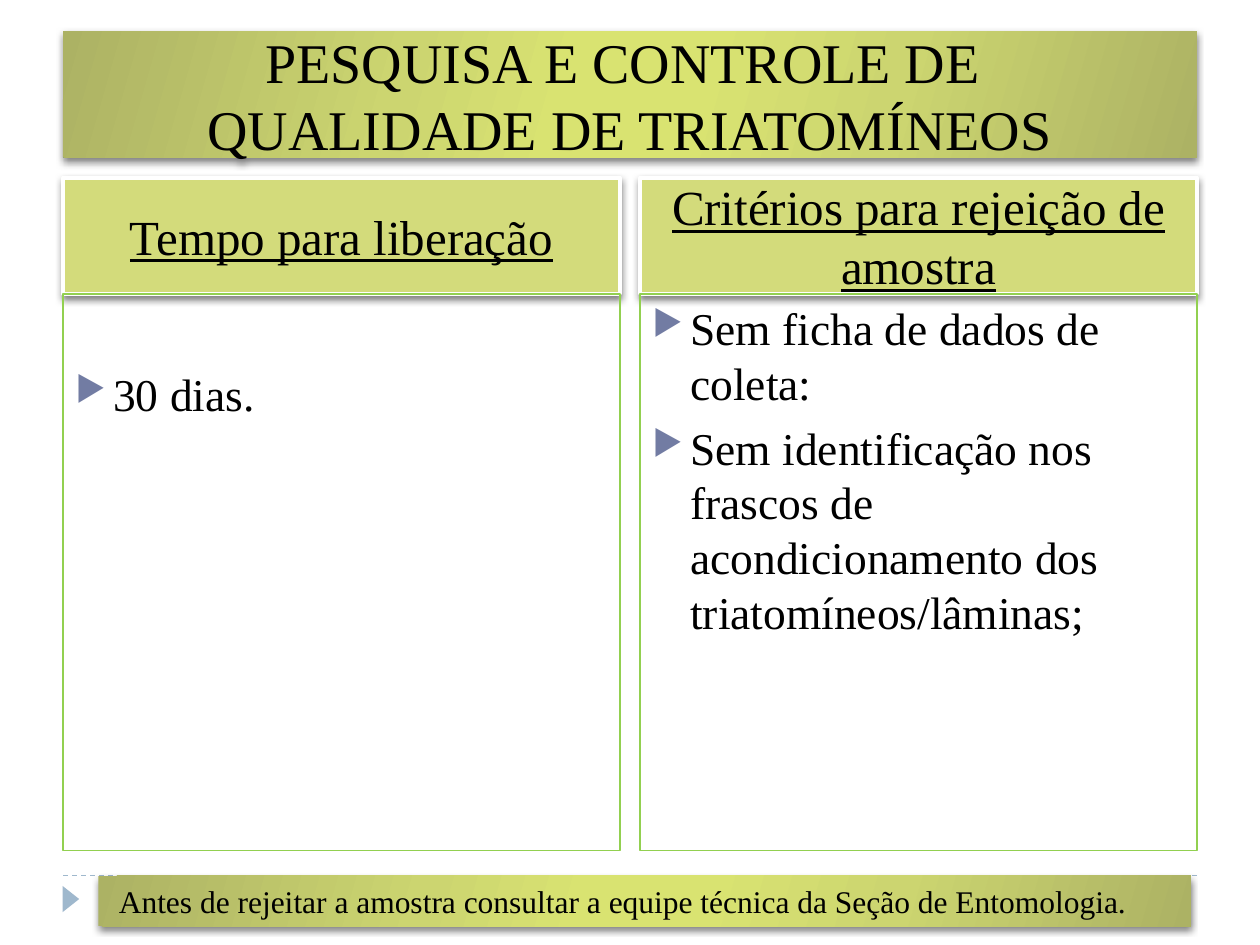
from dataclasses import dataclass

from lxml import etree
from pptx import Presentation
from pptx import util as u
from pptx.dml.color import RGBColor
from pptx.enum import dml, shapes, text
from pptx.oxml import ns

Pt = u.Pt


@dataclass(frozen=True)
class Theme:
    font: str = "Times New Roman"
    ink: str = "000000"
    white: str = "FFFFFF"
    header: str = "D3DB7B"
    frame: str = "92D050"
    rule: str = "9FB8CD"
    bullet: str = "727CA3"
    gradient: tuple = ((0, "ACB264"), (30, "CCD570"), (45, "D9E371"),
                       (55, "D9E371"), (73, "CCD570"), (100, "ACB264"))
    gradient_angle: int = 16
    title_size: int = 32
    header_size: int = 28
    body_size: int = 26
    note_size: int = 18


def add_xml(parent, tag, **attributes):
    return etree.SubElement(parent, ns.qn(tag), attributes)


class SlideBuilder:
    def __init__(self, slide, theme):
        self.slide = slide
        self.theme = theme

    def rule(self, left, right, y):
        line = self.slide.shapes.add_connector(
            shapes.MSO_CONNECTOR.STRAIGHT, Pt(left), Pt(y), Pt(right), Pt(y))
        line.line.color.rgb = RGBColor.from_string(self.theme.rule)
        line.line.width = Pt(0.75)
        line.line.dash_style = dml.MSO_LINE.DASH
        add_xml(line._element.spPr, "a:effectLst")

    def shape(self, kind, box, fill=None, line=None, width=0.75):
        item = self.slide.shapes.add_shape(kind, *map(Pt, box))
        item.shadow.inherit = False
        if fill:
            item.fill.solid()
            item.fill.fore_color.rgb = RGBColor.from_string(fill)
        else:
            item.fill.background()
        if line:
            item.line.color.rgb = RGBColor.from_string(line)
            item.line.width = Pt(width)
        else:
            item.line.fill.background()
        return item

    def marker(self, box):
        self.shape(shapes.MSO_SHAPE.ISOSCELES_TRIANGLE, box,
                   fill=self.theme.rule).rotation = 90

    def drop_shadow(self, item):
        effects = item._element.spPr.find(ns.qn("a:effectLst"))
        shadow = add_xml(effects, "a:outerShdw", blurRad=str(Pt(4)),
                         dist=str(Pt(2)), dir="5400000", rotWithShape="0")
        color = add_xml(shadow, "a:srgbClr", val=self.theme.ink)
        add_xml(color, "a:alpha", val="50000")

    def gradient(self, item):
        properties = item._element.spPr
        fill = etree.Element(ns.qn("a:gradFill"), rotWithShape="1")
        stops = add_xml(fill, "a:gsLst")
        for position, color in self.theme.gradient:
            stop = add_xml(stops, "a:gs", pos=str(position * 1000))
            add_xml(stop, "a:srgbClr", val=color)
        add_xml(fill, "a:lin", ang=str(self.theme.gradient_angle * 60000), scaled="0")
        properties.replace(properties.find(ns.qn("a:noFill")), fill)

    def bullet(self, paragraph):
        properties = paragraph._p.get_or_add_pPr()
        properties.set("marL", str(Pt(21.6)))
        properties.set("indent", str(-Pt(21.6)))
        color = add_xml(properties, "a:buClr")
        add_xml(color, "a:srgbClr", val=self.theme.bullet)
        add_xml(properties, "a:buSzPct", val="76000")
        add_xml(properties, "a:buChar", char="▶")

    def set_text(self, item, lines, size, align=text.PP_ALIGN.LEFT,
                 anchor=text.MSO_ANCHOR.MIDDLE, left=7.2, top=3.6,
                 bullets=False, underline=None):
        frame = item.text_frame
        frame.word_wrap = True
        frame.vertical_anchor = anchor
        frame.margin_left, frame.margin_top = Pt(left), Pt(top)
        for index, line in enumerate(lines):
            paragraph = frame.paragraphs[0] if index == 0 else frame.add_paragraph()
            paragraph.text = line
            paragraph.alignment = align
            if index:
                paragraph.space_before = Pt(6)
            if bullets:
                self.bullet(paragraph)
            font = paragraph.font
            font.name, font.size, font.underline = self.theme.font, Pt(size), underline
            font.color.rgb = RGBColor.from_string(self.theme.ink)

    def banner(self, box, line, size, **style):
        item = self.shape(shapes.MSO_SHAPE.RECTANGLE, box)
        self.gradient(item)
        self.drop_shadow(item)
        self.set_text(item, [line], size, **style)

    def header(self, box, line):
        item = self.shape(shapes.MSO_SHAPE.RECTANGLE, box, self.theme.header,
                          self.theme.white, 2.25)
        self.drop_shadow(item)
        self.set_text(item, [line], self.theme.header_size,
                      align=text.PP_ALIGN.CENTER, underline=True)

    def panel(self, box, lines, top):
        item = self.shape(shapes.MSO_SHAPE.RECTANGLE, box, line=self.theme.frame)
        self.set_text(item, lines, self.theme.body_size, top=top,
                      anchor=text.MSO_ANCHOR.TOP, bullets=True)


def main():
    deck = Presentation()
    deck.slide_width, deck.slide_height = Pt(720), Pt(540)
    theme = Theme()
    page = SlideBuilder(deck.slides.add_slide(deck.slide_layouts[6]), theme)
    margin, content_width, gap = 36, 648, 11.5
    column_width = (content_width - gap) / 2

    # Rules and footer marker
    for y in (500.4, 90):
        page.rule(margin, margin + content_width, y)
    page.marker((33, 509, 15, 9.5))

    # Title
    page.banner((margin, 18, content_width, 72),
                "PESQUISA E CONTROLE DE \vQUALIDADE DE TRIATOMÍNEOS",
                theme.title_size, align=text.PP_ALIGN.CENTER)

    # Two columns: framed panel below a header
    columns = (
        ("Tempo para liberação", ["30 dias."], 41),
        ("Critérios para rejeição de amostra",
         ["Sem ficha de dados de coleta:",
          "Sem identificação nos frascos de acondicionamento dos triatomíneos/lâminas;"],
         3.6),
    )
    for index, (heading, criteria, top) in enumerate(columns):
        left = margin + index * (column_width + gap)
        page.header((left, 101.5, column_width, 66.5), heading)
        page.panel((left, 168, column_width, 318), criteria, top)

    # Footer note
    page.banner((56.2, 500.4, 624.3, 29),
                "Antes de rejeitar a amostra consultar a equipe técnica da Seção de Entomologia.",
                theme.note_size, left=11.7)

    deck.save("out.pptx")


if __name__ == "__main__":
    main()
